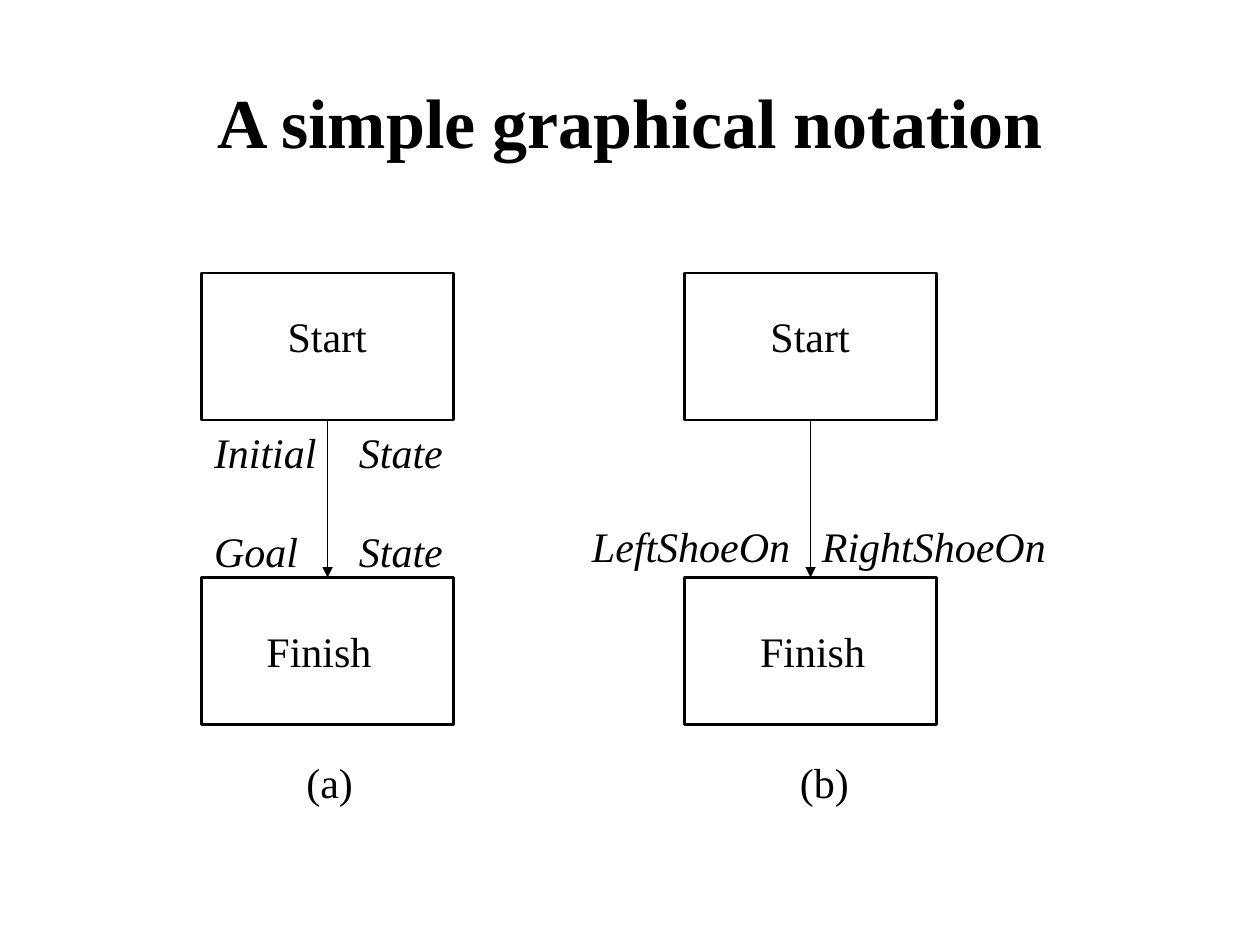
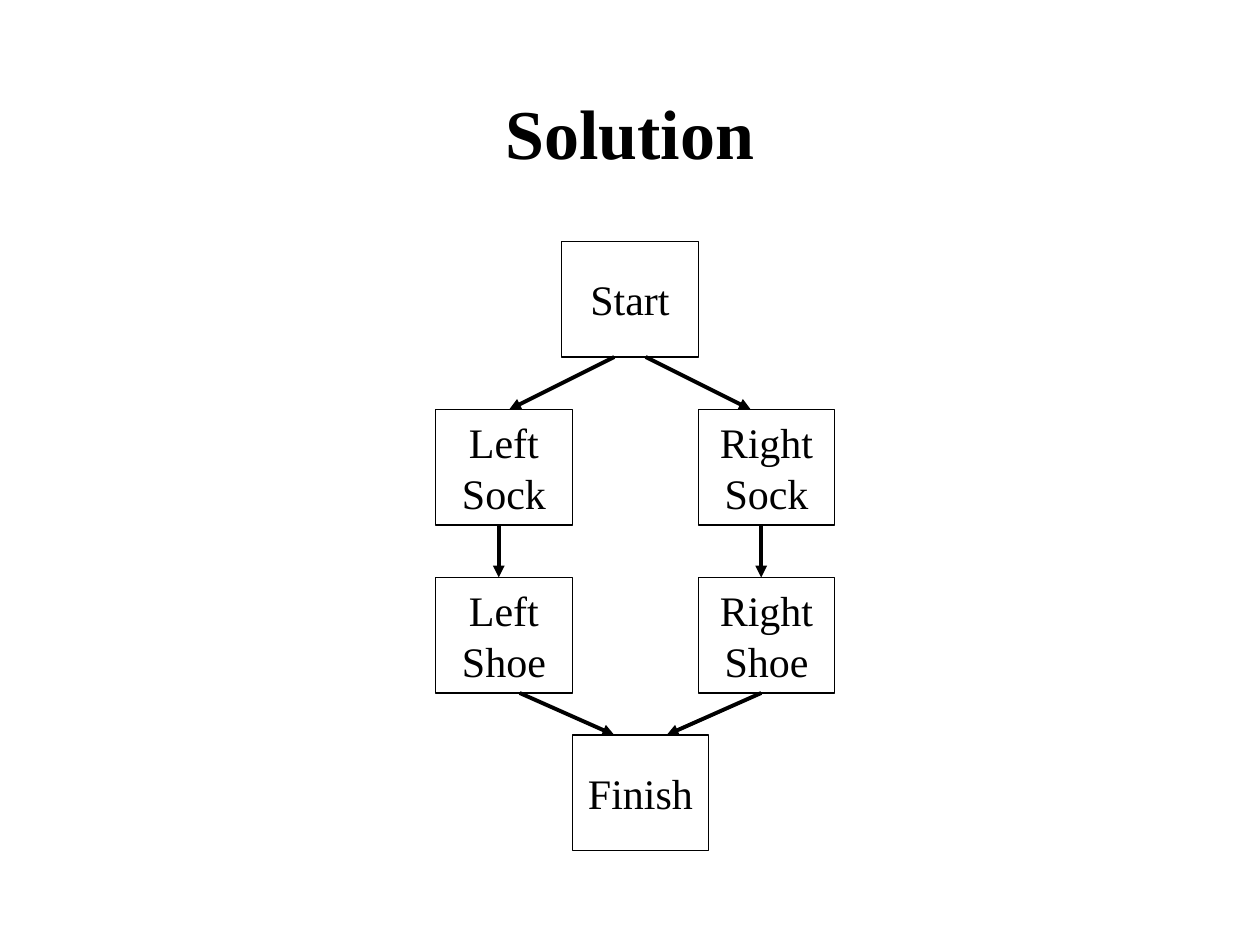
from dataclasses import dataclass

from lxml import etree
from pptx import Presentation
from pptx.dml.color import RGBColor
from pptx.enum.shapes import MSO_CONNECTOR, MSO_SHAPE
from pptx.enum.text import MSO_ANCHOR, MSO_AUTO_SIZE, PP_ALIGN
from pptx.oxml.ns import qn
from pptx.util import Pt

PX = 7620
RECTANGLE = MSO_SHAPE.RECTANGLE
STRAIGHT = MSO_CONNECTOR.STRAIGHT
LEFT, CENTER = PP_ALIGN.LEFT, PP_ALIGN.CENTER
TOP, MIDDLE = MSO_ANCHOR.TOP, MSO_ANCHOR.MIDDLE
NO_AUTOFIT = MSO_AUTO_SIZE.NONE


@dataclass(frozen=True)
class Theme:
    font: str = "Times New Roman"
    ink: RGBColor = RGBColor(0, 0, 0)
    paper: RGBColor = RGBColor(255, 255, 255)
    title_size: int = 40
    label_size: int = 24
    line_gap: int = 28


THEME = Theme()


def write_text(shape, text, size=THEME.label_size, bold=False, italic=False,
               align=LEFT, anchor=TOP, wrap=False, tab=None):
    frame = shape.text_frame
    frame.auto_size = NO_AUTOFIT
    frame.word_wrap = wrap
    frame.vertical_anchor = anchor
    frame.text = text
    for index, paragraph in enumerate(frame.paragraphs):
        paragraph.alignment = align
        paragraph.space_before = Pt(THEME.line_gap if index else 0)
        if tab:
            tab_list = etree.SubElement(paragraph._p.get_or_add_pPr(), qn("a:tabLst"))
            etree.SubElement(tab_list, qn("a:tab"), pos=str(tab * PX), algn="l")
        for run in paragraph.runs:
            run.font.name = THEME.font
            run.font.size = Pt(size)
            run.font.bold = bold
            run.font.italic = italic
            run.font.color.rgb = THEME.ink


def draw_arrow(slide, points, width):
    arrow = slide.shapes.add_connector(STRAIGHT, *(value * PX for value in points))
    arrow.line.color.rgb = THEME.ink
    arrow.line.width = Pt(width)
    etree.SubElement(arrow.line._get_or_add_ln(), qn("a:tailEnd"), type="triangle")
    etree.SubElement(arrow._element.spPr, qn("a:effectLst"))


presentation = Presentation()
presentation.slide_width = 1200 * PX
presentation.slide_height = 900 * PX

slides = []
for title_text, left, top, width in [
    ("A simple graphical notation", 90, 40, 1020),
    ("Solution", 110, 50, 980),
]:
    slide = presentation.slides.add_slide(presentation.slide_layouts[5])
    title = slide.shapes.title
    title.left, title.top = left * PX, top * PX
    title.width, title.height = width * PX, 150 * PX
    write_text(title, title_text, size=THEME.title_size, bold=True,
               align=CENTER, anchor=MIDDLE, wrap=True)
    slides.append(slide)

notation, solution = slides

notation_boxes = [(notation, left, top, 240, 140, "", 1.5)
                  for left in (192, 652) for top in (260, 550)]
solution_boxes = [(solution, left, top, 130, 110, text, 0.75)
                  for left, top, text in [
                      (535, 230, "Start"),
                      (415, 390, "Left\vSock"),
                      (665, 390, "Right\vSock"),
                      (665, 550, "Right\vShoe"),
                      (415, 550, "Left\vShoe"),
                      (545, 700, "Finish"),
                  ]]

for slide, left, top, width, height, text, line_width in notation_boxes + solution_boxes:
    box = slide.shapes.add_shape(RECTANGLE, left * PX, top * PX, width * PX, height * PX)
    box.shadow.inherit = False
    box.line.color.rgb = THEME.ink
    box.line.width = Pt(line_width)
    if text:
        box.fill.solid()
        box.fill.fore_color.rgb = THEME.paper
        write_text(box, text, align=CENTER, anchor=MIDDLE)
    else:
        box.fill.background()

for center in (312, 772):
    draw_arrow(notation, (center, 400, center, 550), 0.75)

for points in [
    (585, 340, 485, 390),
    (615, 340, 715, 390),
    (475, 500, 475, 550),
    (725, 500, 725, 550),
    (495, 660, 585, 700),
    (725, 660, 635, 700),
]:
    draw_arrow(solution, points, 2.25)

for text, left, top, width, height, style in [
    ("Start", 262, 290, 100, 60, {}),
    ("Start", 722, 290, 100, 60, {}),
    ("Initial\tState\nGoal\tState", 192, 400, 260, 156,
     {"italic": True, "wrap": True, "tab": 138}),
    ("Finish", 242, 590, 124, 60, {}),
    ("Finish", 712, 590, 124, 60, {}),
    ("LeftShoeOn\tRightShoeOn", 552, 490, 470, 60,
     {"italic": True, "wrap": True, "tab": 219}),
    ("(a)", 280, 715, 68, 60, {}),
    ("(b)", 750, 715, 70, 60, {}),
]:
    label = notation.shapes.add_textbox(left * PX, top * PX, width * PX, height * PX)
    write_text(label, text, **style)

presentation.save("out.pptx")
